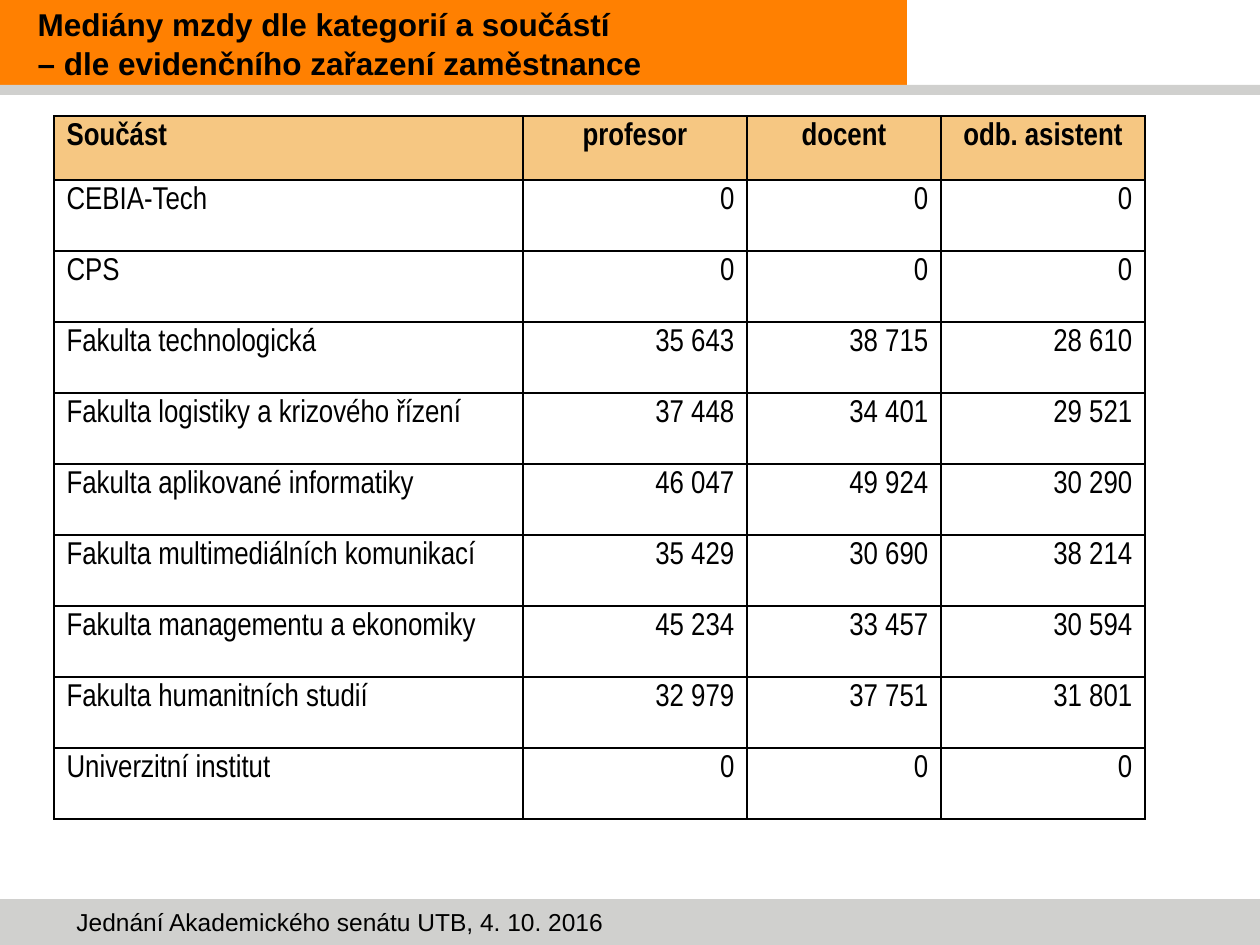
import dataclasses

import lxml.etree
import pptx
import pptx.dml.color
import pptx.enum.shapes
import pptx.enum.text
import pptx.oxml.ns
import pptx.util

EMU_PER_PX = 914400 / 126
ALIGN = pptx.enum.text.PP_ALIGN
ANCHOR = pptx.enum.text.MSO_ANCHOR


@dataclasses.dataclass(frozen=True)
class Theme:
    orange: str = "FF8001"
    grey: str = "D0D0CE"
    header: str = "F6C782"
    white: str = "FFFFFF"
    black: str = "000000"
    body_font: str = "Arial"
    table_font: str = "Arial Narrow"
    title_size: int = 18
    table_size: int = 18
    footer_size: int = 14
    border_width: int = 1


def px(length):
    return pptx.util.Emu(round(length * EMU_PER_PX))


def paint(fill, color):
    fill.solid()
    fill.fore_color.rgb = pptx.dml.color.RGBColor.from_string(color)


class SlideBuilder:
    def __init__(self, slide, theme):
        self.slide = slide
        self.theme = theme

    def style_runs(self, paragraph, font_name, size, bold=False):
        for run in paragraph.runs:
            run.font.name = font_name
            run.font.size = pptx.util.Pt(size)
            run.font.bold = bold
            paint(run.font.fill, self.theme.black)

    def band(self, left, top, width, height, color):
        band = self.slide.shapes.add_shape(
            pptx.enum.shapes.MSO_SHAPE.RECTANGLE, px(left), px(top), px(width), px(height))
        band.shadow.inherit = False
        paint(band.fill, color)
        band.line.fill.background()

    def title(self, text, left, top, width, height, indent):
        title = self.slide.shapes.title
        title.left, title.top, title.width, title.height = map(px, (left, top, width, height))
        frame = title.text_frame
        frame.text = text
        frame.word_wrap = True
        frame.auto_size = pptx.enum.text.MSO_AUTO_SIZE.NONE
        frame.vertical_anchor = ANCHOR.MIDDLE
        heading = frame.paragraphs[0]
        heading.alignment = ALIGN.LEFT
        heading.line_spacing = 1.05
        properties = heading._p.get_or_add_pPr()
        properties.set("marL", str(px(indent)))
        properties.set("indent", "0")
        self.style_runs(heading, self.theme.body_font, self.theme.title_size, bold=True)
        # The title placeholder comes first, so lift it above the bands.
        self.slide.shapes._spTree.append(title._element)

    def footer(self, text, left, top, width, height):
        footer = self.slide.shapes.add_textbox(px(left), px(top), px(width), px(height))
        frame = footer.text_frame
        frame.word_wrap = True
        frame.auto_size = pptx.enum.text.MSO_AUTO_SIZE.SHAPE_TO_FIT_TEXT
        frame.text = text
        self.style_runs(frame.paragraphs[0], self.theme.body_font, self.theme.footer_size)

    def cell_borders(self, cell):
        qn = pptx.oxml.ns.qn
        properties = cell._tc.get_or_add_tcPr()
        for side in ("lnL", "lnR", "lnT", "lnB"):
            border = lxml.etree.SubElement(
                properties, qn(f"a:{side}"), w=str(pptx.util.Pt(self.theme.border_width)))
            fill = lxml.etree.SubElement(border, qn("a:solidFill"))
            lxml.etree.SubElement(fill, qn("a:srgbClr"), val=self.theme.black)

    def table(self, rows, left, top, column_widths, row_heights):
        table = self.slide.shapes.add_table(
            len(rows), len(column_widths), px(left), px(top),
            px(sum(column_widths)), px(sum(row_heights))).table
        table.horz_banding = False
        for column, width in zip(table.columns, column_widths):
            column.width = px(width)
        for row, height in zip(table.rows, row_heights):
            row.height = px(height)
        for row_index, values in enumerate(rows):
            is_header = row_index == 0
            for column_index, value in enumerate(values):
                cell = table.cell(row_index, column_index)
                cell.text = value
                self.cell_borders(cell)
                paint(cell.fill, self.theme.header if is_header else self.theme.white)
                entry = cell.text_frame.paragraphs[0]
                if column_index == 0:
                    entry.alignment = ALIGN.LEFT
                else:
                    entry.alignment = ALIGN.CENTER if is_header else ALIGN.RIGHT
                self.style_runs(entry, self.theme.table_font, self.theme.table_size, is_header)


MEDIAN_WAGES = [
    ("Součást", "profesor", "docent", "odb. asistent"),
    ("CEBIA-Tech", "0", "0", "0"),
    ("CPS", "0", "0", "0"),
    ("Fakulta technologická", "35 643", "38 715", "28 610"),
    ("Fakulta logistiky a krizového řízení", "37 448", "34 401", "29 521"),
    ("Fakulta aplikované informatiky", "46 047", "49 924", "30 290"),
    ("Fakulta multimediálních komunikací", "35 429", "30 690", "38 214"),
    ("Fakulta managementu a ekonomiky", "45 234", "33 457", "30 594"),
    ("Fakulta humanitních studií", "32 979", "37 751", "31 801"),
    ("Univerzitní institut", "0", "0", "0"),
]


def main():
    presentation = pptx.Presentation()
    presentation.slide_width, presentation.slide_height = px(1260), px(945)
    theme = Theme()
    slide = presentation.slides.add_slide(presentation.slide_layouts.get_by_name("Title Only"))
    builder = SlideBuilder(slide, theme)

    builder.band(0, 0, 907, 85, theme.orange)
    builder.band(0, 899, 1260, 46, theme.grey)
    builder.band(0, 85, 1260, 10, theme.grey)
    builder.footer("Jednání Akademického senátu UTB, 4. 10. 2016", 64, 901, 1160, 43)
    builder.title("Mediány mzdy dle kategorií a součástí\v– dle evidenčního zařazení zaměstnance",
                  0, 0, 907, 85, indent=25)
    body_rows = len(MEDIAN_WAGES) - 1
    builder.table(MEDIAN_WAGES, 54, 116, column_widths=[469, 224, 194, 204],
                  row_heights=[64] + [71] * body_rows)
    presentation.save("out.pptx")


if __name__ == "__main__":
    main()
